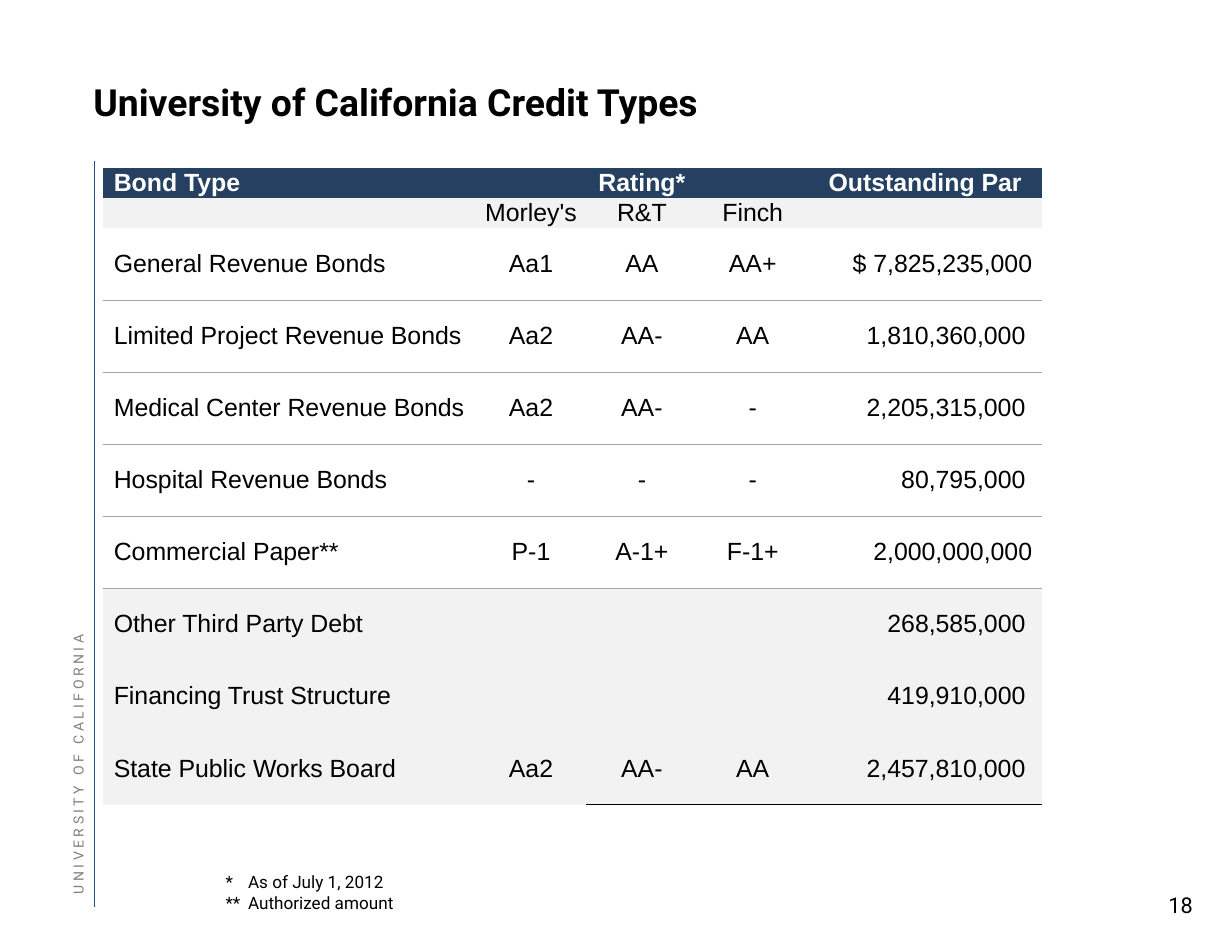
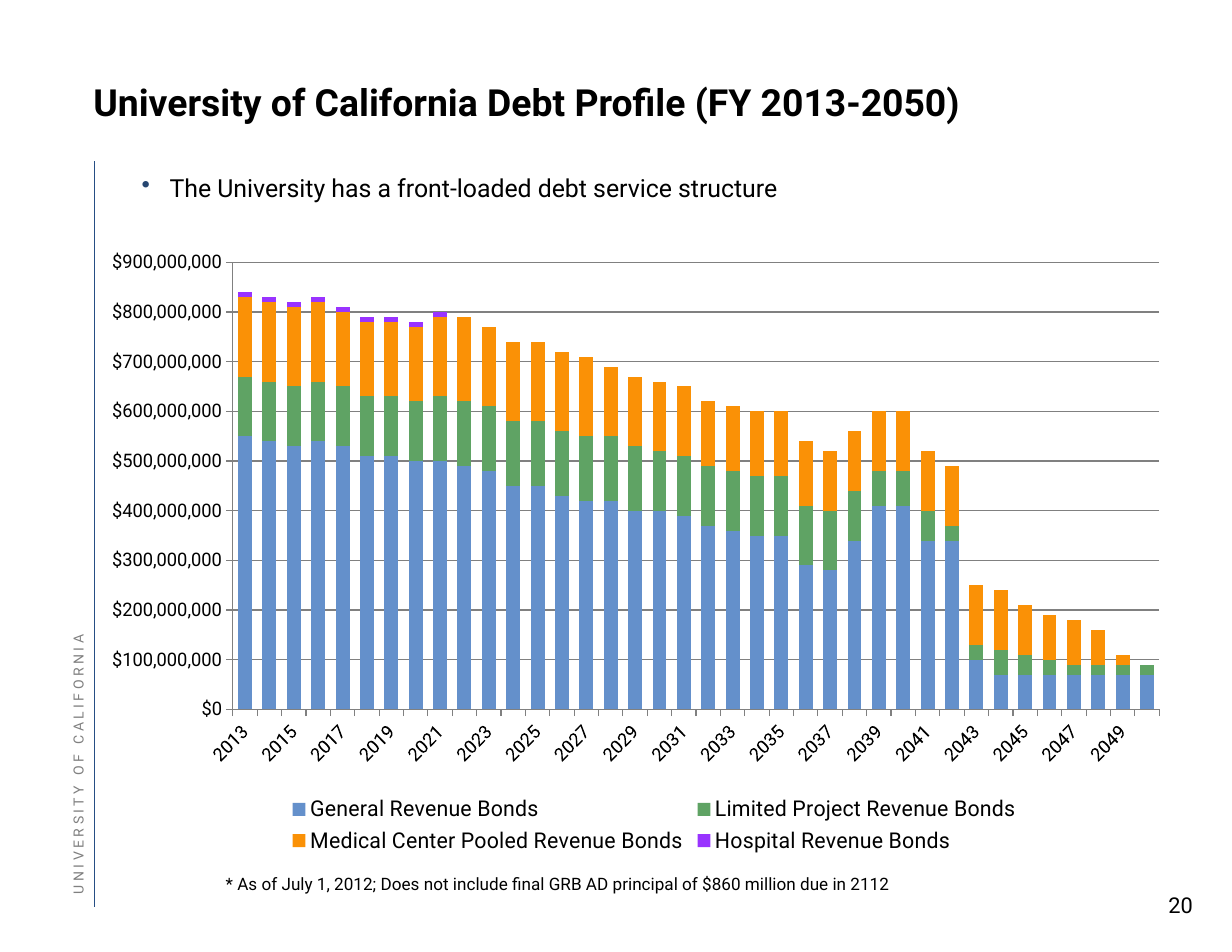
import pptx
import pptx.chart.data
import pptx.dml.color
import pptx.enum.chart
import pptx.enum.shapes
import pptx.enum.text
import pptx.oxml
import pptx.oxml.ns
import pptx.util
from lxml import etree

# Slide grid: 132 columns by 102 rows, twelve to the inch
UNIT = pptx.util.Inches(1) // 12
COLUMNS, ROWS = 132, 102

# Shared look
BODY_FONT, TABLE_FONT = "Roboto", "Arial"
BLACK, WHITE, GREY = "000000", "FFFFFF", "808080"
NAVY, PALE, RULE, BULLET, EDGE = "254061", "F2F2F2", "A5A5A5", "264671", "264E84"

ALIGN = pptx.enum.text.PP_ALIGN
ANCHOR = pptx.enum.text.MSO_ANCHOR
LEFT, CENTER, RIGHT = ALIGN.LEFT, ALIGN.CENTER, ALIGN.RIGHT

# Credit table: bond type, three ratings, outstanding par
CREDITS = [
    ("General Revenue Bonds", "Aa1", "AA", "AA+", "$ 7,825,235,000"),
    ("Limited Project Revenue Bonds", "Aa2", "AA-", "AA", "1,810,360,000"),
    ("Medical Center Revenue Bonds", "Aa2", "AA-", "-", "2,205,315,000"),
    ("Hospital Revenue Bonds", "-", "-", "-", "80,795,000"),
    ("Commercial Paper**", "P-1", "A-1+", "F-1+", "2,000,000,000"),
    ("Other Third Party Debt", "", "", "", "268,585,000"),
    ("Financing Trust Structure", "", "", "", "419,910,000"),
    ("State Public Works Board", "Aa2", "AA-", "AA", "2,457,810,000"),
]
HEADINGS = [
    ("Bond Type", "Rating*", "", "", "Outstanding Par"),
    ("", "Morley's", "R&T", "Finch", ""),
]
FLUSH_AMOUNTS = ("$ 7,825,235,000", "2,000,000,000")

# Debt service by fiscal year, in millions of dollars
YEARS = range(2013, 2051)
DEBT_SERVICE = [
    ("General Revenue Bonds", "6490CB",
     [550, 540, 530, 540, 530, 510, 510, 500, 500, 490, 480, 450, 450,
      430, 420, 420, 400, 400, 390, 370, 360, 350, 350, 290, 280, 340,
      410, 410, 340, 340, 100] + [70] * 7),
    ("Limited Project Revenue Bonds", "5FA364",
     [120] * 8 + [130] * 9 + [120] * 8
     + [100, 70, 70, 60, 30, 30, 50, 40, 30, 20, 20, 20, 20]),
    ("Medical Center Pooled Revenue Bonds", "FA9106",
     [160] * 4 + [150] * 4 + [160, 170] + [160] * 5 + [140] * 4
     + [130] * 5 + [120] * 8 + [100, 90, 90, 70, 20, 0]),
    ("Hospital Revenue Bonds", "9933FF", [10] * 9 + [0] * 29),
]


def color(value):
    return pptx.dml.color.RGBColor.from_string(value)


def place(left, top, width, height):
    return [round(UNIT * length) for length in (left, top, width, height)]


def set_font(font, size, fill=BLACK, name=BODY_FONT, bold=False):
    font.name = name
    font.size = pptx.util.Pt(size)
    font.bold = bold
    font.color.rgb = color(fill)


def write(frame, text, size=11, align=LEFT, spacing=None, hang=0, bullet=None, **style):
    """Fill a text frame, one paragraph for each line of text."""
    for index, line in enumerate(text.split("\n")):
        para = frame.add_paragraph() if index else frame.paragraphs[0]
        para.text = line
        para.alignment = align
        if spacing:
            para.line_spacing = pptx.util.Pt(spacing)
        props = para._p.get_or_add_pPr()
        if hang:
            props.set("marL", str(pptx.util.Inches(hang)))
            props.set("indent", str(-pptx.util.Inches(hang)))
        if bullet:
            tint = etree.SubElement(props, pptx.oxml.ns.qn("a:buClr"))
            etree.SubElement(tint, pptx.oxml.ns.qn("a:srgbClr"), val=BULLET)
            etree.SubElement(props, pptx.oxml.ns.qn("a:buChar"), char=bullet)
        for span in para.runs:
            set_font(span.font, size, **style)


def set_margins(target, left=0.0, top=0.0, right=0.0, bottom=0.0):
    target.margin_left = pptx.util.Inches(left)
    target.margin_top = pptx.util.Inches(top)
    target.margin_right = pptx.util.Inches(right)
    target.margin_bottom = pptx.util.Inches(bottom)


def add_text(page, area, text, margins=(0.1, 0.05, 0.1, 0.05), **style):
    box = page.shapes.add_textbox(*place(*area))
    box.text_frame.word_wrap = True
    set_margins(box.text_frame, *margins)
    write(box.text_frame, text, **style)
    return box


def add_page(deck, title, number, title_width):
    """Title, side rule, vertical name and page number."""
    page = deck.slides.add_slide(deck.slide_layouts[5])
    heading = page.shapes.title
    heading.left, heading.top, heading.width, heading.height = place(10, 7, title_width, 8)
    set_margins(heading.text_frame)
    heading.text_frame.vertical_anchor = ANCHOR.MIDDLE
    heading.text_frame.word_wrap = True
    write(heading.text_frame, title, size=24, bold=True, spacing=27.9)

    x, top, _, bottom = place(10.1, 17.3, 0, 97.2)
    rule = page.shapes.add_connector(
        pptx.enum.shapes.MSO_CONNECTOR.STRAIGHT, x, top, x, bottom)
    rule.line.color.rgb = color(EDGE)
    rule.line.width = pptx.util.Pt(0.35)
    etree.SubElement(rule._element.spPr, pptx.oxml.ns.qn("a:effectLst"))

    side = add_text(page, (-17.65, 68.9, 52, 1.8), " ".join("UNIVERSITY OF CALIFORNIA"),
                    margins=(0, 0, 0, 0), size=9, fill=GREY, spacing=12)
    side.text_frame.vertical_anchor = ANCHOR.BOTTOM
    side.rotation = 270
    add_text(page, (123, 95, 6, 4), number, size=14, align=RIGHT)
    return page


def add_bottom_border(cell, line_color, width):
    border = pptx.oxml.parse_xml(
        f'<a:lnB {pptx.oxml.ns.nsdecls("a")} w="{pptx.util.Pt(width)}">'
        f'<a:solidFill><a:srgbClr val="{line_color}"/></a:solidFill></a:lnB>')
    cell._tc.get_or_add_tcPr().insert(0, border)


def format_cell(cell, text, row, column):
    header = row == 0
    shade = NAVY if header else PALE if row == 1 or row > 6 else None
    if shade:
        cell.fill.solid()
        cell.fill.fore_color.rgb = color(shade)
    else:
        cell.fill.background()
    amount = column == 4 and row > 1
    right = (0.09 if text in FLUSH_AMOUNTS else 0.15) if amount else 0
    set_margins(cell, left=0 if column else 0.1, right=right)
    cell.vertical_anchor = ANCHOR.MIDDLE
    write(cell.text_frame, text, size=16, name=TABLE_FONT, bold=header,
          fill=WHITE if header else BLACK,
          align=LEFT if column == 0 else RIGHT if amount else CENTER)
    if not text:
        cell.text_frame.paragraphs[0].font.size = pptx.util.Pt(16)
    if 2 <= row <= 6:
        add_bottom_border(cell, RULE, 0.5)
    elif row == 9 and column >= 2:
        add_bottom_border(cell, BLACK, 1)


def add_credit_table(page):
    lines = HEADINGS + CREDITS
    frame = page.shapes.add_table(len(lines), 5, *place(11, 18, 100.8, 68.2))
    table = frame.table
    table.first_row = table.horz_banding = False
    style = table._tbl.tblPr.find(pptx.oxml.ns.qn("a:tableStyleId"))
    style.text = "{2D5ABB26-0587-4C30-8999-92F81FD0307C}"
    for column, width in zip(table.columns, [3.33, 0.99, 0.99, 0.99, 2.09]):
        column.width = pptx.util.Inches(width)
    for index, row in enumerate(table.rows):
        row.height = pptx.util.Inches(0.26 if index < 2 else 0.644)
    for row, line in enumerate(lines):
        for column, text in enumerate(line):
            format_cell(table.cell(row, column), text, row, column)
    table.cell(0, 1).merge(table.cell(0, 3))


def set_plot_area(chart, x, y, w, h):
    """Fix the inner plot area as shares of the chart's size."""
    area = chart._chartSpace.chart.plotArea
    for old in area.findall(pptx.oxml.ns.qn("c:layout")):
        area.remove(old)
    sizes = "".join(f'<c:{key} val="{value}"/>' for key, value in
                    [("x", x), ("y", y), ("w", w), ("h", h)])
    area.insert(0, pptx.oxml.parse_xml(
        f'<c:layout {pptx.oxml.ns.nsdecls("c")}><c:manualLayout>'
        '<c:layoutTarget val="inner"/><c:xMode val="edge"/><c:yMode val="edge"/>'
        f'{sizes}</c:manualLayout></c:layout>'))


def add_debt_chart(page):
    data = pptx.chart.data.CategoryChartData()
    data.categories = [str(year) for year in YEARS]
    for name, _, millions in DEBT_SERVICE:
        data.add_series(name, [value * 1_000_000 for value in millions])
    kind = pptx.enum.chart.XL_CHART_TYPE.COLUMN_STACKED
    chart = page.shapes.add_chart(kind, *place(12, 26, 114, 66), data).chart
    chart.has_title = False
    set_font(chart.font, 12)
    set_plot_area(chart, 0.096, 0.032, 0.888, 0.726)

    # Columns
    plot = chart.plots[0]
    plot.gap_width, plot.overlap = 75, 100
    plot.vary_by_categories = False
    for series, (_, fill, _) in zip(plot.series, DEBT_SERVICE):
        series.format.fill.solid()
        series.format.fill.fore_color.rgb = color(fill)
        series.invert_if_negative = False

    # Axes
    dollars, years = chart.value_axis, chart.category_axis
    dollars.minimum_scale, dollars.maximum_scale = 0, 900_000_000
    dollars.major_unit = 100_000_000
    dollars.has_major_gridlines = True
    dollars.tick_labels.number_format = '"$"#,##0'
    dollars.tick_labels.number_format_is_linked = False
    for line in (dollars.format.line, years.format.line, dollars.major_gridlines.format.line):
        line.color.rgb = color(GREY)
        line.width = pptx.util.Pt(0.75)
    for axis in (dollars, years):
        axis.major_tick_mark = pptx.enum.chart.XL_TICK_MARK.OUTSIDE
        set_font(axis.tick_labels.font, 12)
    turned = years._element.find(f'{pptx.oxml.ns.qn("c:txPr")}/{pptx.oxml.ns.qn("a:bodyPr")}')
    turned.set("rot", "-2700000")
    turned.set("vert", "horz")

    # Legend
    chart.has_legend = True
    chart.legend.position = pptx.enum.chart.XL_LEGEND_POSITION.BOTTOM
    chart.legend.include_in_layout = True
    set_font(chart.legend.font, 14)


def main():
    deck = pptx.Presentation()
    deck.slide_width, deck.slide_height = UNIT * COLUMNS, UNIT * ROWS

    # Credit types
    page = add_page(deck, "University of California Credit Types", "18", 96)
    add_credit_table(page)
    add_text(page, (23, 92.8, 66, 5.6), "*\tAs of July 1, 2012\n**\tAuthorized amount", hang=0.2)

    # Debt profile
    page = add_page(deck, "University of California Debt Profile (FY 2013-2050)", "20", 108)
    add_text(page, (14, 18, 108, 7), "The University has a front-loaded debt service structure",
             margins=(0.1, 0.04, 0.04, 0.04), size=16, hang=0.25, bullet="•")
    add_debt_chart(page)
    add_text(page, (23, 93, 87, 3.5), "* As of July 1, 2012; Does not include final GRB AD "
             "principal of $860 million due in 2112")

    deck.save("out.pptx")


if __name__ == "__main__":
    main()
